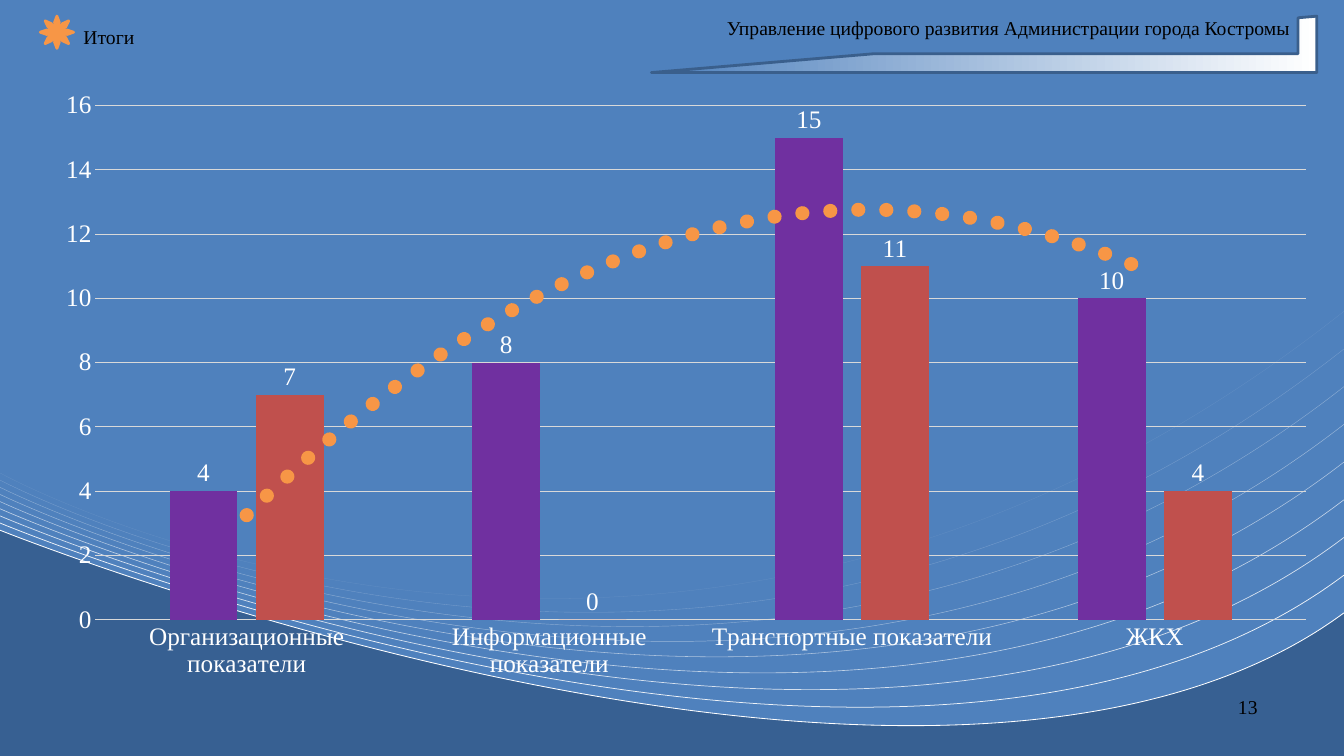
from lxml import etree
from pptx import Presentation
from pptx.chart.data import CategoryChartData
from pptx.dml.color import RGBColor
from pptx.enum.chart import XL_CHART_TYPE, XL_LABEL_POSITION, XL_TICK_MARK
from pptx.enum.shapes import MSO_SHAPE
from pptx.oxml import parse_xml
from pptx.oxml.ns import qn
from pptx.util import Inches, Pt

NAVY = RGBColor(0x37, 0x60, 0x92)
BLUE = RGBColor(0x4F, 0x81, 0xBD)
FRAME_BLUE = RGBColor(0x3A, 0x5F, 0x8C)
ORANGE = RGBColor(0xF7, 0x96, 0x46)
PURPLE = RGBColor(0x70, 0x30, 0xA0)
RED = RGBColor(0xC0, 0x50, 0x4D)
GREY = RGBColor(0xD9, 0xD9, 0xD9)
WHITE = RGBColor(0xFF, 0xFF, 0xFF)
BLACK = RGBColor(0, 0, 0)

FONT = "Times New Roman"
WIDTH, HEIGHT = 13.33, 7.5
SKY_HEIGHT = 7.48
WAVE_COUNT = 9

TRENDLINE = f"""
<c:trendline xmlns:c="http://schemas.openxmlformats.org/drawingml/2006/chart"
             xmlns:a="http://schemas.openxmlformats.org/drawingml/2006/main">
  <c:spPr><a:ln w="{Pt(10)}" cap="rnd">
    <a:solidFill><a:srgbClr val="{ORANGE}"/></a:solidFill><a:prstDash val="sysDot"/>
  </a:ln></c:spPr>
  <c:trendlineType val="poly"/><c:order val="2"/>
  <c:dispRSqr val="0"/><c:dispEq val="0"/>
</c:trendline>"""


def add_curve(slide, start_y, control, end_y, corners=()):
    """Cubic curve across the slide; with corners, it becomes a closed area.

    The builder starts at the slide corner, so its points are slide positions.
    Its first two straight segments are then joined into one cubic segment.
    """
    start, *others = [(Inches(x), Inches(y)) for x, y in
                      ((0, start_y), control, (WIDTH, end_y), *corners)]
    builder = slide.shapes.build_freeform(0, 0)
    builder.move_to(*start)
    builder.add_line_segments(others, close=bool(corners))
    curve = builder.convert_to_shape()
    curve.shadow.inherit = False

    outline = curve._element.find(".//" + qn("a:pathLst"))[0]
    corner_move, start_move, to_control, to_end = outline[:4]
    outline.remove(corner_move)
    cubic = etree.Element(qn("a:cubicBezTo"))
    start_move.addnext(cubic)
    etree.SubElement(cubic, qn("a:pt"), dict(start_move[0].attrib))
    for segment in (to_control, to_end):
        cubic.append(segment[0])
        outline.remove(segment)
    curve.height = Inches(SKY_HEIGHT)
    outline.set("h", str(curve.height))
    return curve


def add_sky(slide):
    sky = add_curve(slide, 5.26, (9.34, 9.01), 6.08, ((WIDTH, 0), (0, 0)))
    sky.fill.solid()
    sky.fill.fore_color.rgb = BLUE
    sky.line.fill.background()


def add_waves(slide):
    """White curves that rise, thin out and fade one after another."""
    for i in range(WAVE_COUNT):
        control = (9.36 - 0.337 * i, 9.01 - 0.08 * i)
        wave = add_curve(slide, 5.26 - 0.071 * i, control, 6.08 - 0.374 * i)
        wave.fill.background()
        wave.line.width = Pt(0.6 - 0.05 * i)
        wave.line.color.rgb = WHITE
        color = wave.line._ln.find(".//" + qn("a:srgbClr"))
        etree.SubElement(color, qn("a:alpha"), val=str(100000 - 11250 * i))


def add_preset(slide, kind, left, top, width, height, adjustments, line_color):
    preset = slide.shapes.add_shape(
        kind, Inches(left), Inches(top), Inches(width), Inches(height))
    preset.shadow.inherit = False
    for i, value in enumerate(adjustments):
        preset.adjustments[i] = value
    preset.line.color.rgb = line_color
    preset.line.width = Pt(2)
    return preset


def add_header_frame(slide):
    frame = add_preset(slide, MSO_SHAPE.HALF_FRAME, 6.46, 0.16, 6.6, 0.56,
                       (0.333, 0.333), FRAME_BLUE)
    frame.rotation = 180
    frame.fill.gradient()
    frame.fill.gradient_angle = 180
    for stop, position, color in zip(frame.fill.gradient_stops, (0, 1), (BLUE, WHITE)):
        stop.position = position
        stop.color.rgb = color


def add_sun(slide):
    sun = add_preset(slide, MSO_SHAPE.SUN, 0.4, 0.16, 0.33, 0.32, (0.25,), ORANGE)
    sun.fill.solid()
    sun.fill.fore_color.rgb = ORANGE


def add_label(slide, text, left, top, width, wrap=True):
    label = slide.shapes.add_textbox(
        Inches(left), Inches(top), Inches(width), Inches(0.33))
    label.text_frame.word_wrap = wrap
    paragraph = label.text_frame.paragraphs[0]
    paragraph.text = text
    style_font(paragraph.font, 14, BLACK)


def style_font(font, size, color):
    font.name = FONT
    font.size = Pt(size)
    font.color.rgb = color


def style_line(line):
    line.color.rgb = GREY
    line.width = Pt(0.75)


def style_axes(chart):
    categories, values = chart.category_axis, chart.value_axis
    for axis in (categories, values):
        axis.major_tick_mark = XL_TICK_MARK.NONE
        axis.minor_tick_mark = XL_TICK_MARK.NONE
        style_font(axis.tick_labels.font, 18, WHITE)
    style_line(categories.format.line)
    values.format.line.fill.background()
    values.has_major_gridlines = True
    style_line(values.major_gridlines.format.line)
    values.minimum_scale, values.maximum_scale, values.major_unit = 0, 16, 2


def add_results_chart(slide):
    results = CategoryChartData()
    results.categories = ["Организационные показатели", "Информационные показатели",
                          "Транспортные показатели", "ЖКХ"]
    results.add_series("Series 1", (4, 8, 15, 10))
    results.add_series("Series 2", (7, 0, 11, 4))
    chart = slide.shapes.add_chart(
        XL_CHART_TYPE.COLUMN_CLUSTERED, Inches(0.4), Inches(0.79),
        Inches(12.81), Inches(6.06), results).chart
    chart.has_legend = False
    chart.has_title = False
    style_font(chart.font, 18, WHITE)
    style_axes(chart)

    plot = chart.plots[0]
    plot.vary_by_categories = False
    plot.gap_width = 219
    plot.overlap = -27
    for series, color in zip(plot.series, (PURPLE, RED)):
        series.format.fill.solid()
        series.format.fill.fore_color.rgb = color
        series.invert_if_negative = False
        labels = series.data_labels
        labels.show_value = True
        labels.position = XL_LABEL_POSITION.OUTSIDE_END
        style_font(labels.font, 18, WHITE)
    first_categories = plot.series[0]._element.find(qn("c:cat"))
    first_categories.addprevious(parse_xml(TRENDLINE))


def main():
    presentation = Presentation()
    presentation.slide_width = Inches(WIDTH)
    presentation.slide_height = Inches(HEIGHT)
    slide = presentation.slides.add_slide(presentation.slide_layouts[6])
    slide.background.fill.solid()
    slide.background.fill.fore_color.rgb = NAVY

    add_sky(slide)
    add_waves(slide)
    add_header_frame(slide)
    add_label(slide, "Управление цифрового развития Администрации города Костромы",
              7.11, 0.11, 5.81, wrap=False)
    add_sun(slide)
    add_label(slide, "Итоги", 0.73, 0.2, 4.44)
    add_label(slide, "13", 12.18, 6.84, 0.89)
    add_results_chart(slide)
    presentation.save("out.pptx")


if __name__ == "__main__":
    main()
